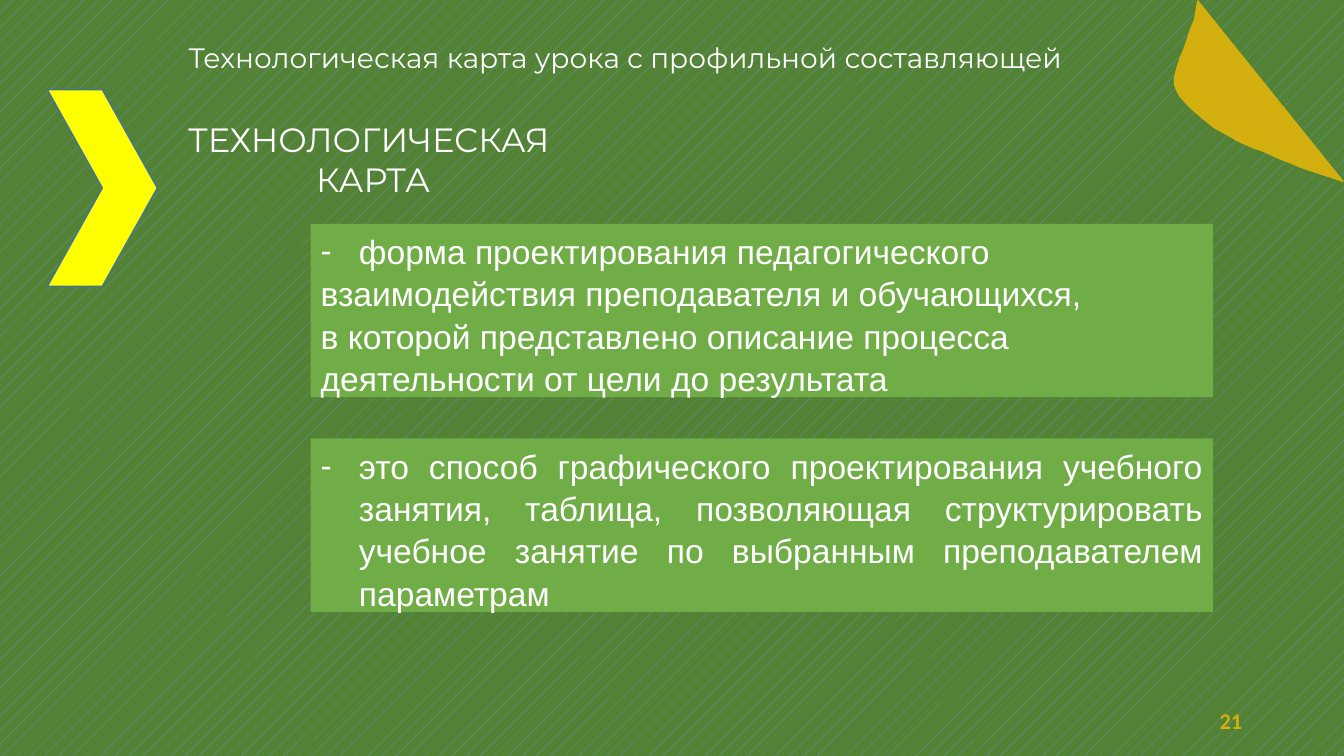
import pptx
import pptx.dml.color
import pptx.enum.dml
import pptx.enum.shapes
import pptx.enum.text
import pptx.oxml
import pptx.oxml.ns
import pptx.util
from dataclasses import dataclass

Inches = pptx.util.Inches
Pt = pptx.util.Pt
ALIGN = pptx.enum.text.PP_ALIGN
ANCHOR = pptx.enum.text.MSO_ANCHOR


@dataclass(frozen=True)
class Theme:
    ground: str = "548235"
    hatch: str = "5B9BD5"
    panel: str = "70AD47"
    text: str = "FFFFFF"
    gold: str = "FFC000"
    gold_dark: str = "D3B00E"
    chevron: str = "FFFF00"
    chevron_line: str = "43739E"
    heading_font: str = "Montserrat"
    body_font: str = "Arial"
    number_font: str = "Calibri"
    title_size: int = 20
    body_size: int = 24
    number_size: int = 16


THEME = Theme()

TITLE = "Технологическая карта урока с профильной составляющей"
TERM = ["ТЕХНОЛОГИЧЕСКАЯ ", "КАРТА"]
DEFINITIONS = [
    ["форма проектирования педагогического ",
     "взаимодействия преподавателя и обучающихся,",
     "в которой представлено описание процесса ",
     "деятельности от цели до результата"],
    ["это способ графического проектирования учебного занятия, таблица, "
     "позволяющая структурировать учебное занятие по выбранным "
     "преподавателем параметрам"],
]

# Outline of the corner leaf, in inches
LEAF = [(11.88, 0.01), (11.86, 0.13), (11.85, 0.19), (11.81, 0.29),
        (11.75, 0.47), (11.70, 0.59), (11.67, 0.69), (11.65, 0.77),
        (11.65, 0.84), (11.67, 0.89), (11.70, 0.95), (11.76, 1.02),
        (11.82, 1.08), (11.89, 1.14), (11.96, 1.20), (12.05, 1.27),
        (12.16, 1.33), (12.28, 1.40), (12.44, 1.47), (12.53, 1.50),
        (12.68, 1.57), (12.81, 1.62), (12.93, 1.67), (13.08, 1.72),
        (13.21, 1.76), (13.32, 1.80)]


def rgb(code):
    return pptx.dml.color.RGBColor.from_string(code)


def place(shape, left, top, width, height):
    shape.left, shape.top = Inches(left), Inches(top)
    shape.width, shape.height = Inches(width), Inches(height)


def paint(shape, fill, line):
    shape.shadow.inherit = False
    shape.fill.solid()
    shape.fill.fore_color.rgb = rgb(fill)
    shape.line.color.rgb = rgb(line)
    shape.line.width = Pt(1)


def write(shape, lines, font, size, color=THEME.text, align=ALIGN.LEFT,
          anchor=ANCHOR.TOP, bold=False, spacing=1.0):
    frame = shape.text_frame
    frame.word_wrap = True
    frame.auto_size = pptx.enum.text.MSO_AUTO_SIZE.NONE
    frame.vertical_anchor = anchor
    for index, line in enumerate(lines):
        paragraph = frame.add_paragraph() if index else frame.paragraphs[0]
        paragraph.alignment = align
        paragraph.line_spacing = spacing
        paragraph.space_before = paragraph.space_after = Pt(0)
        run = paragraph.add_run()
        run.text = line
        run.font.name, run.font.size = font, Pt(size)
        run.font.bold = bold
        run.font.color.rgb = rgb(color)


def add_label(slide, box, lines, font, size, **style):
    label = slide.shapes.add_textbox(*map(Inches, box))
    write(label, lines, font, size, **style)


def set_bullet(paragraph, mark=None):
    """Hang a bullet on the paragraph, or clear the inherited one."""
    properties = paragraph._p.get_or_add_pPr()
    indent = Inches(0.38) if mark else 0
    properties.set("marL", str(indent))
    properties.set("indent", str(-indent))
    tag = f'a:buChar char="{mark}"' if mark else "a:buNone"
    properties.append(pptx.oxml.parse_xml(
        f'<{tag} {pptx.oxml.ns.nsdecls("a")}/>'.replace(
            f'<{tag} ', f'<{tag} ', 1)))


def fill_definition(panel, lines, top):
    place(panel, 3.08, top, 8.95, 1.72)
    panel.fill.solid()
    panel.fill.fore_color.rgb = rgb(THEME.panel)
    write(panel, lines, THEME.body_font, THEME.body_size,
          align=ALIGN.JUSTIFY, spacing=1.05)
    for index, paragraph in enumerate(panel.text_frame.paragraphs):
        set_bullet(paragraph, None if index else "-")


def add_leaf(slide):
    points = [(Inches(x), Inches(y)) for x, y in LEAF]
    builder = slide.shapes.build_freeform(*points[0])
    builder.add_line_segments(points[1:], close=True)
    leaf = builder.convert_to_shape()
    paint(leaf, THEME.gold, THEME.gold_dark)
    color = leaf.fill._xPr.find(".//" + pptx.oxml.ns.qn("a:srgbClr"))
    color.append(pptx.oxml.parse_xml(
        f'<a:alpha {pptx.oxml.ns.nsdecls("a")} val="74000"/>'))


def add_chevron(slide):
    chevron = slide.shapes.add_shape(
        pptx.enum.shapes.MSO_SHAPE.CHEVRON,
        *map(Inches, (0.47, 0.89, 1.09, 1.95)))
    paint(chevron, THEME.chevron, THEME.chevron_line)


def set_background(slide):
    fill = slide.background.fill
    fill.patterned()
    fill.pattern = pptx.enum.dml.MSO_PATTERN.PERCENT_5
    fill.fore_color.rgb = rgb(THEME.hatch)
    fill.back_color.rgb = rgb(THEME.ground)


def main():
    deck = pptx.Presentation()
    deck.slide_width, deck.slide_height = Inches(13.33), Inches(7.5)
    slide = deck.slides.add_slide(deck.slide_layouts.get_by_name("Two Content"))
    set_background(slide)
    title, *panels = slide.placeholders

    # Heading and term
    place(title, 1.77, 0.35, 9.83, 0.44)
    write(title, [TITLE], THEME.heading_font, THEME.title_size)
    add_label(slide, (1.59, 1.13, 4.22, 0.91), TERM, THEME.heading_font,
              THEME.body_size, align=ALIGN.CENTER)

    # Two definitions
    for index, (panel, lines) in enumerate(zip(panels, DEFINITIONS)):
        fill_definition(panel, lines, 2.22 + 2.13 * index)

    # Decoration and slide number
    add_leaf(slide)
    add_chevron(slide)
    add_label(slide, (9.42, 6.95, 3, 0.4), ["21"], THEME.number_font,
              THEME.number_size, color=THEME.gold_dark, align=ALIGN.RIGHT,
              anchor=ANCHOR.MIDDLE, bold=True)

    deck.save("out.pptx")


if __name__ == "__main__":
    main()
